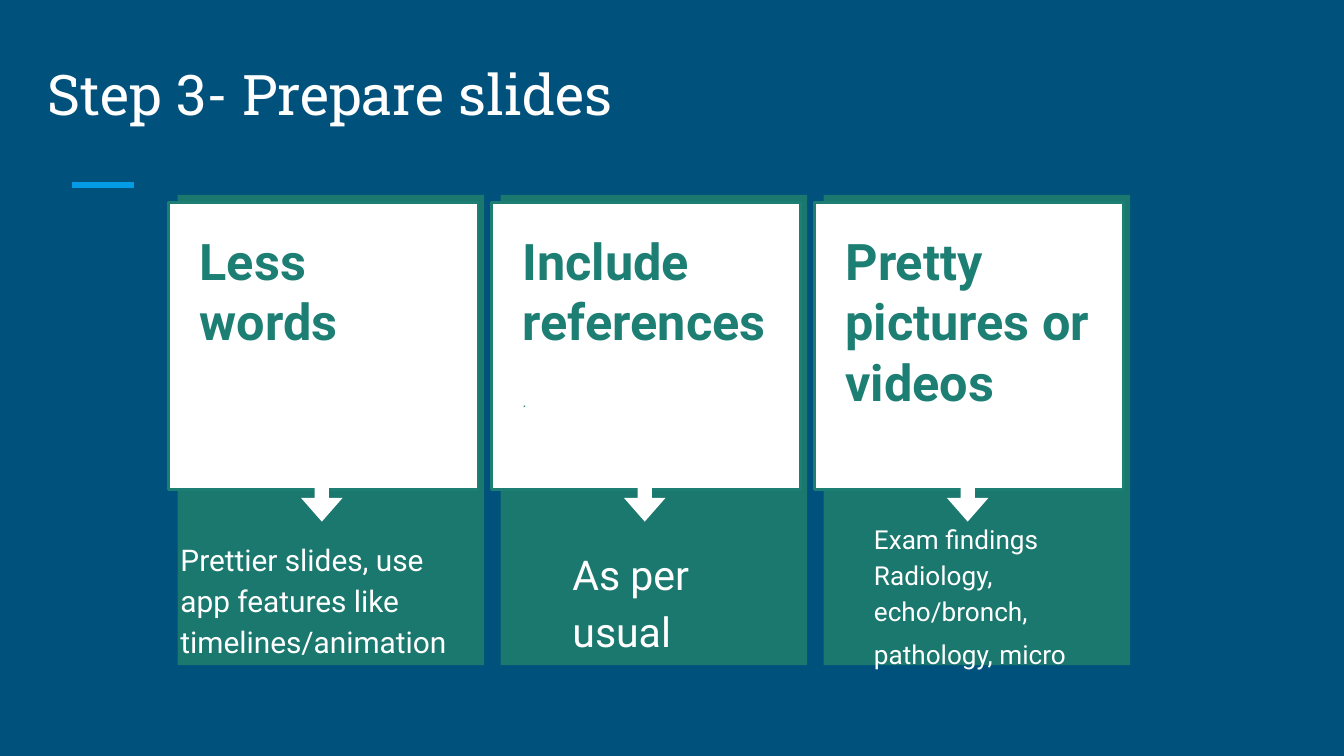
from pptx import Presentation
from pptx.dml.color import RGBColor
from pptx.enum.shapes import MSO_CONNECTOR as Connector, MSO_SHAPE as Shape
from pptx.enum.text import MSO_ANCHOR as Anchor, MSO_AUTO_SIZE as AutoSize, PP_ALIGN as Align
from pptx.oxml.ns import qn
from pptx.util import Pt
from lxml.etree import SubElement

COLORS = {
    "background": "00517C",
    "accent": "039BE5",
    "panel": "1B786E",
    "heading": "1D7E74",
    "white": "FFFFFF",
}
CARD_LEFT, CARD_TOP, CARD_WIDTH, CARD_HEIGHT = 95.2, 104.4, 164.2, 252
CARD_PITCH = 173
DETAIL_HEIGHT = 67

CARDS = [
    {"heading": ["Less words"], "detail": [[("Prettier slides, use app features like timelines/animation", 16)]],
     "detail_box": (-41.6, 175.7, 206)},
    {"heading": ["Include", "references"], "note": ".", "detail": [[("As per usual", 22)]],
     "detail_box": (-4.6, 178.8, 164.2)},
    {"heading": ["Pretty pictures or videos"],
     "detail": [[("Exam findings", 14)],
                [("Radiology, echo/bronch, pathology, micro", 14), (" ", 17)]],
     "detail_box": (-16.1, 166.3, 196.6)},
]


def color(name):
    """Return the named palette colour."""
    return RGBColor.from_string(COLORS[name])


def fill_frame(frame, paragraphs, color_name, font="Roboto", bold=False, spacing=None, indent=0):
    """Write paragraphs of (text, size) runs into a text frame."""
    frame.word_wrap = True
    frame.auto_size = AutoSize.NONE
    frame.margin_left = frame.margin_right = frame.margin_top = frame.margin_bottom = Pt(7.2)
    for index, runs in enumerate(paragraphs):
        paragraph = frame.paragraphs[0] if index == 0 else frame.add_paragraph()
        paragraph.alignment = Align.LEFT
        if spacing:
            paragraph.line_spacing = spacing
        if indent:
            properties = paragraph._p.get_or_add_pPr()
            properties.set("marL", str(Pt(indent)))
            properties.set("indent", "0")
        for text, size in runs:
            run = paragraph.add_run()
            run.text = text
            run.font.name = font
            run.font.size = Pt(size)
            run.font.bold = bold
            run.font.color.rgb = color(color_name)


def add_block(shapes, kind, left, top, width, height, fill, line=None):
    """Add a flat filled shape with an optional outline."""
    shape = shapes.add_shape(kind, Pt(left), Pt(top), Pt(width), Pt(height))
    shape.shadow.inherit = False
    shape.fill.solid()
    shape.fill.fore_color.rgb = color(fill)
    if line:
        shape.line.color.rgb = color(line)
        shape.line.width = Pt(1.5)
    else:
        shape.line.fill.background()
    return shape


def add_text(shapes, left, top, width, height, paragraphs, color_name, **style):
    """Add a text box holding the given paragraphs."""
    box = shapes.add_textbox(Pt(left), Pt(top), Pt(width), Pt(height))
    fill_frame(box.text_frame, paragraphs, color_name, **style)


def add_title(slide, left, top, width, height):
    """Place the title and the short accent rule below it."""
    rule_left, rule_top = left + 20, top + 78.3
    rule = slide.shapes.add_connector(
        Connector.STRAIGHT, Pt(rule_left), Pt(rule_top), Pt(rule_left + 33.5), Pt(rule_top))
    rule.line.color.rgb = color("accent")
    rule.line.width = Pt(3)
    SubElement(rule._element.spPr, qn("a:effectLst"))
    title = slide.shapes.title
    title.left, title.top, title.width, title.height = Pt(left), Pt(top), Pt(width), Pt(height)
    title.text_frame.vertical_anchor = Anchor.BOTTOM
    fill_frame(title.text_frame, [[("Step 3- Prepare slides", 30)]], "white", font="Roboto Slab")


def add_card(slide, card, left, top, width, height):
    """Build one grouped card: panel, heading box, arrow and detail text."""
    shapes = slide.shapes.add_group_shape().shapes
    add_block(shapes, Shape.RECTANGLE, left, top, width, height, "panel")
    add_block(shapes, Shape.RECTANGLE, left - 4.7, top + 4, width + 1.4, 154, "white", "heading")
    if "note" in card:
        add_text(shapes, left + 4.7, top + 97.2, 147, 51, [[(card["note"], 8)]], "heading", spacing=1.15)
    heading = [[(line, 27)] for line in card["heading"]]
    add_text(shapes, left + 4.7, top + 11.5, 147, 42, heading, "heading", bold=True)
    arrow = add_block(shapes, Shape.RIGHT_ARROW, left + 65.3, top + 152, 23.8, 22.3, "white")
    arrow.rotation = 90
    arrow.adjustments[0], arrow.adjustments[1] = 0.34, 0.57
    offset_x, offset_y, detail_width = card["detail_box"]
    add_text(shapes, left + offset_x, top + offset_y, detail_width, DETAIL_HEIGHT,
             card["detail"], "white", spacing=1.15, indent=36)


def main():
    """Build and save the slide."""
    presentation = Presentation()
    presentation.slide_width, presentation.slide_height = Pt(720), Pt(405)
    slide = presentation.slides.add_slide(presentation.slide_layouts[5])
    slide.background.fill.solid()
    slide.background.fill.fore_color.rgb = color("background")
    add_title(slide, 18.5, 20.9, 658.8, 54)
    for index, card in enumerate(CARDS):
        add_card(slide, card, CARD_LEFT + index * CARD_PITCH, CARD_TOP, CARD_WIDTH, CARD_HEIGHT)
    presentation.save("out.pptx")


if __name__ == "__main__":
    main()
